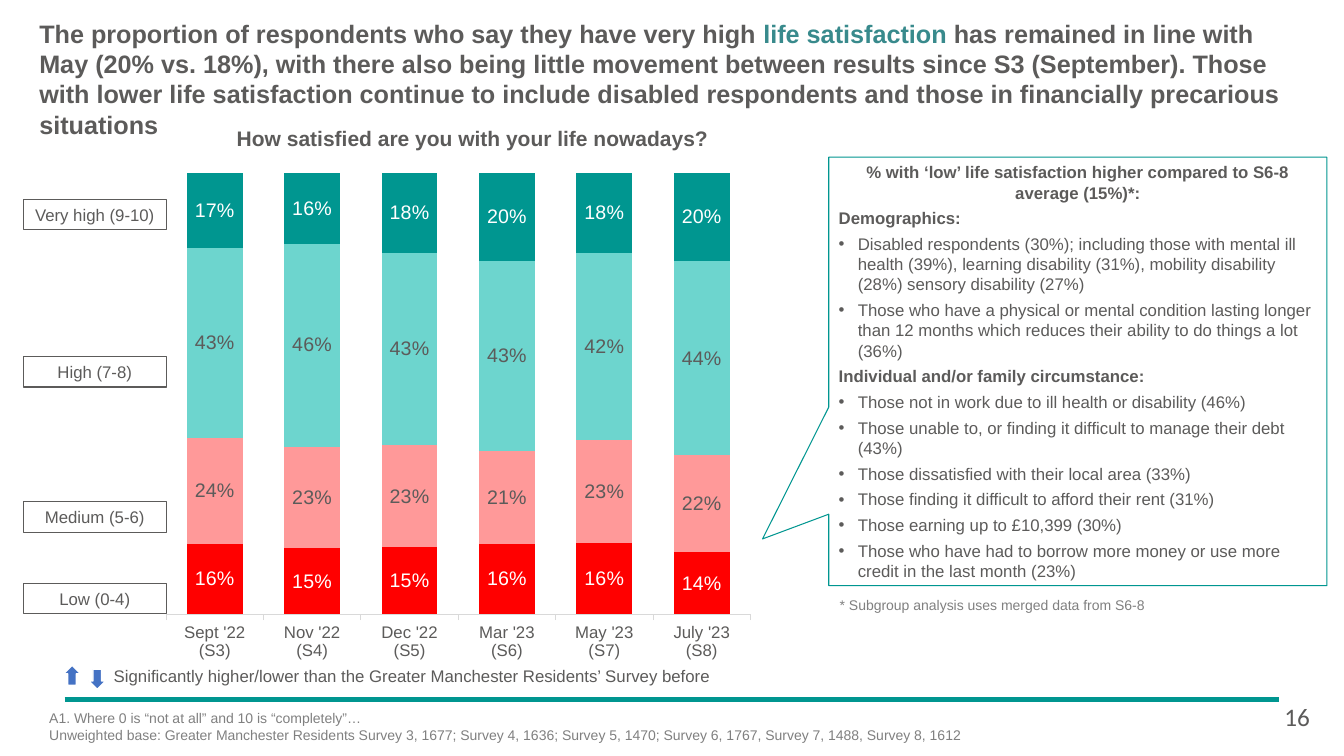
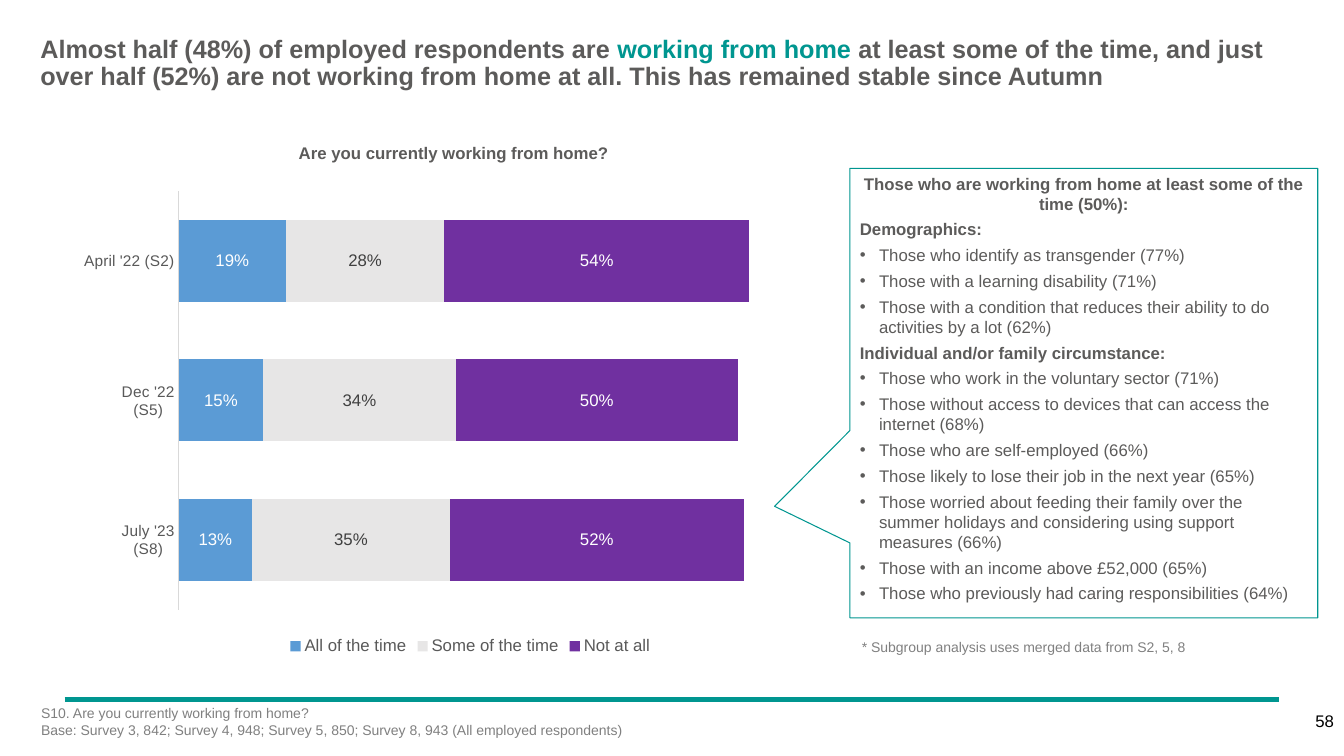
"""Build two survey result slides with a shared title, rule, chart and callout style."""
from lxml.etree import SubElement
from pptx import Presentation
from pptx.chart.data import CategoryChartData
from pptx.dml.color import RGBColor
from pptx.enum.chart import XL_CHART_TYPE, XL_LABEL_POSITION, XL_LEGEND_POSITION, XL_TICK_MARK
from pptx.enum.shapes import MSO_CONNECTOR, MSO_SHAPE
from pptx.enum.text import MSO_ANCHOR, PP_ALIGN
from pptx.oxml.ns import qn
from pptx.util import Inches, Pt

COLOURS = {
    "text": "5C5B5A", "teal": "009690", "blue_teal": "388A8C", "note": "808080",
    "white": "FFFFFF", "black": "000000", "arrow": "4472C4", "axis": "D9D9D9",
    "red": "FF0000", "pink": "FF9999", "aqua": "6DD5CE",
    "blue": "5B9BD5", "pale": "E7E6E6", "purple": "7030A0", "dark": "404040",
    "chart_text": "595959",
}


def colour(name):
    return RGBColor.from_string(COLOURS[name])


class SurveyDeck:
    def __init__(self):
        self.deck = Presentation()
        self.deck.slide_width, self.deck.slide_height = Inches(13.33), Inches(7.5)
        self.page = None

    def set_font(self, font, size, tone="text", bold=False, name="Arial"):
        font.name, font.size, font.bold = name, Pt(size), bold
        font.color.rgb = colour(tone)

    def add_page(self):
        self.page = self.deck.slides.add_slide(self.deck.slide_layouts[6])
        rule = self.page.shapes.add_connector(
            MSO_CONNECTOR.STRAIGHT, Inches(0.64), Inches(6.94), Inches(12.69), Inches(6.94))
        rule.line.color.rgb, rule.line.width = colour("teal"), Pt(3)
        SubElement(rule._element.spPr, qn("a:effectLst"))

    def add_text(self, place, lines, size, tone="text", bold=False,
                 align=PP_ALIGN.LEFT, name="Arial", inset=True):
        box = self.page.shapes.add_textbox(*map(Inches, place))
        frame = box.text_frame
        frame.word_wrap = True
        if not inset:
            frame.margin_left = frame.margin_right = frame.margin_top = frame.margin_bottom = 0
        for index, line in enumerate(lines):
            para = frame.paragraphs[0] if index == 0 else frame.add_paragraph()
            para.text, para.alignment = line, align
            self.set_font(para.font, size, tone, bold, name)
        return frame.paragraphs[0]

    def add_title(self, place, before, accent, after, tone, spacing=1.0):
        para = self.add_text(place, [before], 18, bold=True, inset=False)
        para.line_spacing = spacing
        span = para.add_run()
        span.text, span.font.color.rgb = accent, colour(tone)
        para.add_run().text = after

    def add_shape(self, preset, place, fill, line, width):
        shape = self.page.shapes.add_shape(preset, *map(Inches, place))
        shape.shadow.inherit = False
        if fill:
            shape.fill.solid()
            shape.fill.fore_color.rgb = colour(fill)
        else:
            shape.fill.background()
        shape.line.color.rgb, shape.line.width = colour(line), Pt(width)
        return shape

    def add_label(self, place, text):
        para = self.add_shape(MSO_SHAPE.RECTANGLE, place, None, "text", 0.75).text_frame.paragraphs[0]
        para.text, para.alignment = text, PP_ALIGN.CENTER
        self.set_font(para.font, 12)

    def add_callout(self, place, tip, heading, sections):
        callout = self.add_shape(MSO_SHAPE.RECTANGULAR_CALLOUT, place, "white", "teal", 0.75)
        callout.adjustments[0], callout.adjustments[1] = tip
        frame = callout.text_frame
        frame.word_wrap, frame.vertical_anchor = True, MSO_ANCHOR.TOP
        self.add_callout_line(frame.paragraphs[0], heading, PP_ALIGN.CENTER)
        for section, points in sections.items():
            self.add_callout_line(frame.add_paragraph(), section)
            for point in points:
                self.add_callout_line(frame.add_paragraph(), point, bullet=True)

    def add_callout_line(self, para, text, align=PP_ALIGN.LEFT, bullet=False):
        para.text, para.alignment, para.space_after = text, align, Pt(4)
        if bullet:
            properties = para._p.get_or_add_pPr()
            properties.set("marL", str(Inches(0.19)))
            properties.set("indent", str(-Inches(0.19)))
            SubElement(properties, qn("a:buFont")).set("typeface", "Arial")
            SubElement(properties, qn("a:buChar")).set("char", "•")
        self.set_font(para.font, 12, bold=not bullet)

    def add_chart(self, kind, place, plot_area, categories, series, gap, label_size,
                  axis_size, axis_tone, tick, top, legend=False):
        data = CategoryChartData(number_format="0%")
        data.categories = categories
        for name, values, *_ in series:
            data.add_series(name, values)
        chart = self.page.shapes.add_chart(kind, *map(Inches, place), data).chart
        chart.has_title = False
        self.set_font(chart.font, axis_size, "black")
        chart.has_legend = legend
        if legend:
            chart.legend.position = XL_LEGEND_POSITION.BOTTOM
            chart.legend.include_in_layout = False
            self.set_font(chart.legend.font, 12, axis_tone)
        value_axis, category_axis = chart.value_axis, chart.category_axis
        value_axis.visible = value_axis.has_major_gridlines = False
        value_axis.minimum_scale, value_axis.maximum_scale = 0, top
        category_axis.major_tick_mark = tick
        category_axis.format.line.color.rgb = colour("axis")
        category_axis.format.line.width = Pt(0.75)
        self.set_font(category_axis.tick_labels.font, axis_size, axis_tone)
        plot = chart.plots[0]
        plot.gap_width, plot.overlap, plot.vary_by_categories = gap, 100, False
        for bars, (_, _, fill, tone) in zip(plot.series, series):
            bars.format.fill.solid()
            bars.format.fill.fore_color.rgb = colour(fill)
            labels = bars.data_labels
            labels.show_value, labels.position = True, XL_LABEL_POSITION.CENTER
            labels.number_format, labels.number_format_is_linked = "0%", False
            self.set_font(labels.font, label_size, tone)
        self.set_plot_area(chart, plot_area)

    def set_plot_area(self, chart, fractions):
        area = chart._chartSpace.chart.plotArea
        for old in area.findall(qn("c:layout")):
            area.remove(old)
        layout = SubElement(area, qn("c:layout"))
        area.insert(0, layout)
        manual = SubElement(layout, qn("c:manualLayout"))
        settings = [("layoutTarget", "inner"), ("xMode", "edge"), ("yMode", "edge")]
        settings += zip("xywh", map(str, fractions))
        for tag, value in settings:
            SubElement(manual, qn(f"c:{tag}")).set("val", value)


def add_satisfaction_page(survey):
    survey.add_page()
    survey.add_title(
        (0.39, 0.18, 12.56, 1.21),
        "The proportion of respondents who say they have very high ", "life satisfaction ",
        "has remained in line with May (20% vs. 18%), with there also being little movement "
        "between results since S3 (September). Those with lower life satisfaction continue to "
        "include disabled respondents and those in financially precarious situations",
        "blue_teal")
    survey.add_text((2.25, 1.2, 5.1, 0.35), ["How satisfied are you with your life nowadays?"],
                    15, bold=True)
    survey.add_chart(
        XL_CHART_TYPE.COLUMN_STACKED_100, (1.13, 1.58, 6.39, 5.25), (0.081, 0.026, 0.907, 0.834),
        ["Sept '22\n(S3)", "Nov '22\n(S4)", "Dec '22\n(S5)",
         "Mar '23\n(S6)", "May '23\n(S7)", "July '23\n(S8)"],
        [("Low (0-4)", (0.16, 0.15, 0.15, 0.16, 0.16, 0.14), "red", "white"),
         ("Medium (5-6)", (0.24, 0.23, 0.23, 0.21, 0.23, 0.22), "pink", "text"),
         ("High (7-8)", (0.43, 0.46, 0.43, 0.43, 0.42, 0.44), "aqua", "text"),
         ("Very high (9-10)", (0.17, 0.16, 0.18, 0.2, 0.18, 0.2), "teal", "white")],
        gap=75, label_size=14, axis_size=12, axis_tone="text",
        tick=XL_TICK_MARK.OUTSIDE, top=1)
    for top, text in ((1.98, "Very high (9-10)"), (3.54, "High (7-8)"),
                      (4.98, "Medium (5-6)"), (5.79, "Low (0-4)")):
        survey.add_label((0.23, top, 1.42, 0.3), text)
    for preset, left, top in ((MSO_SHAPE.UP_ARROW, 0.63, 6.6), (MSO_SHAPE.DOWN_ARROW, 0.88, 6.64)):
        survey.add_shape(preset, (left, top, 0.17, 0.2), "arrow", "white", 1)
    survey.add_text(
        (1.03, 6.56, 6.4, 0.3),
        ["Significantly higher/lower than the Greater Manchester Residents’ Survey before"], 12)
    survey.add_callout(
        (8.22, 1.56, 4.94, 4.25), (-0.633, 0.391),
        "% with ‘low’ life satisfaction higher compared to S6-8 average (15%)*:",
        {"Demographics:": [
            "Disabled respondents (30%); including those with mental ill health (39%), learning "
            "disability (31%), mobility disability (28%) sensory disability (27%)",
            "Those who have a physical or mental condition lasting longer than 12 months which "
            "reduces their ability to do things a lot (36%)"],
         "Individual and/or family circumstance:": [
            "Those not in work due to ill health or disability (46%)",
            "Those unable to, or finding it difficult to manage their debt (43%)",
            "Those dissatisfied with their local area (33%)",
            "Those finding it difficult to afford their rent (31%)",
            "Those earning up to £10,399 (30%)",
            "Those who have had to borrow more money or use more credit in the last month (23%)"]})
    survey.add_text((8.23, 5.87, 3.8, 0.27), ["* Subgroup analysis uses merged data from S6-8"],
                    10, "note")
    survey.add_text(
        (0.39, 6.99, 11.6, 0.5),
        ["A1. Where 0 is “not at all” and 10 is “completely”…",
         "Unweighted base: Greater Manchester Residents Survey 3, 1677; Survey 4, 1636; "
         "Survey 5, 1470; Survey 6, 1767, Survey 7, 1488, Survey 8, 1612"], 10, "note")
    survey.add_text((12.64, 6.91, 0.53, 0.4), ["16"], 18, name="Calibri")


def add_home_working_page(survey):
    survey.add_page()
    survey.add_title(
        (0.4, 0.36, 12.25, 0.64),
        "Almost half (48%) of employed respondents are ", "working from home ",
        "at least some of the time, and just over half (52%) are not working from home at all. "
        "This has remained stable since Autumn", "teal", 0.9)
    survey.add_text((2.24, 1.42, 4.52, 0.2), ["Are you currently working from home?"], 12,
                    bold=True, align=PP_ALIGN.CENTER, inset=False)
    survey.add_chart(
        XL_CHART_TYPE.BAR_STACKED, (0.68, 1.67, 7.97, 4.87), (0.137, 0.047, 0.844, 0.852),
        ["July '23\n(S8)", "Dec '22\n(S5)", "April '22 (S2)"],
        [("All of the time", (0.13, 0.15, 0.19), "blue", "white"),
         ("Some of the time", (0.35, 0.34, 0.28), "pale", "dark"),
         ("Not at all", (0.52, 0.5, 0.54), "purple", "white")],
        gap=70, label_size=12, axis_size=11, axis_tone="chart_text",
        tick=XL_TICK_MARK.NONE, top=1.2, legend=True)
    survey.add_callout(
        (8.43, 1.67, 4.64, 4.46), (-0.661, 0.252),
        "Those who are working from home at least some of the time (50%):",
        {"Demographics:": [
            "Those who identify as transgender (77%)",
            "Those with a learning disability (71%)",
            "Those with a condition that reduces their ability to do activities by a lot (62%)"],
         "Individual and/or family circumstance:": [
            "Those who work in the voluntary sector (71%)",
            "Those without access to devices that can access the internet (68%)",
            "Those who are self-employed (66%)",
            "Those likely to lose their job in the next year (65%)",
            "Those worried about feeding their family over the summer holidays and considering "
            "using support measures (66%)",
            "Those with an income above £52,000 (65%)",
            "Those who previously had caring responsibilities (64%)"]})
    survey.add_text((8.45, 6.29, 3.64, 0.27),
                    ["* Subgroup analysis uses merged data from S2, 5, 8"], 10, "note")
    survey.add_text(
        (0.31, 6.94, 11.98, 0.5),
        ["S10. Are you currently working from home?",
         "Base: Survey 3, 842; Survey 4, 948; Survey 5, 850; Survey 8, 943 "
         "(All employed respondents)"], 10, "note")
    survey.add_text((12.8, 7, 0.53, 0.3), ["58"], 12, "black", align=PP_ALIGN.RIGHT)


def main():
    survey = SurveyDeck()
    add_satisfaction_page(survey)
    add_home_working_page(survey)
    survey.deck.save("out.pptx")


if __name__ == "__main__":
    main()
